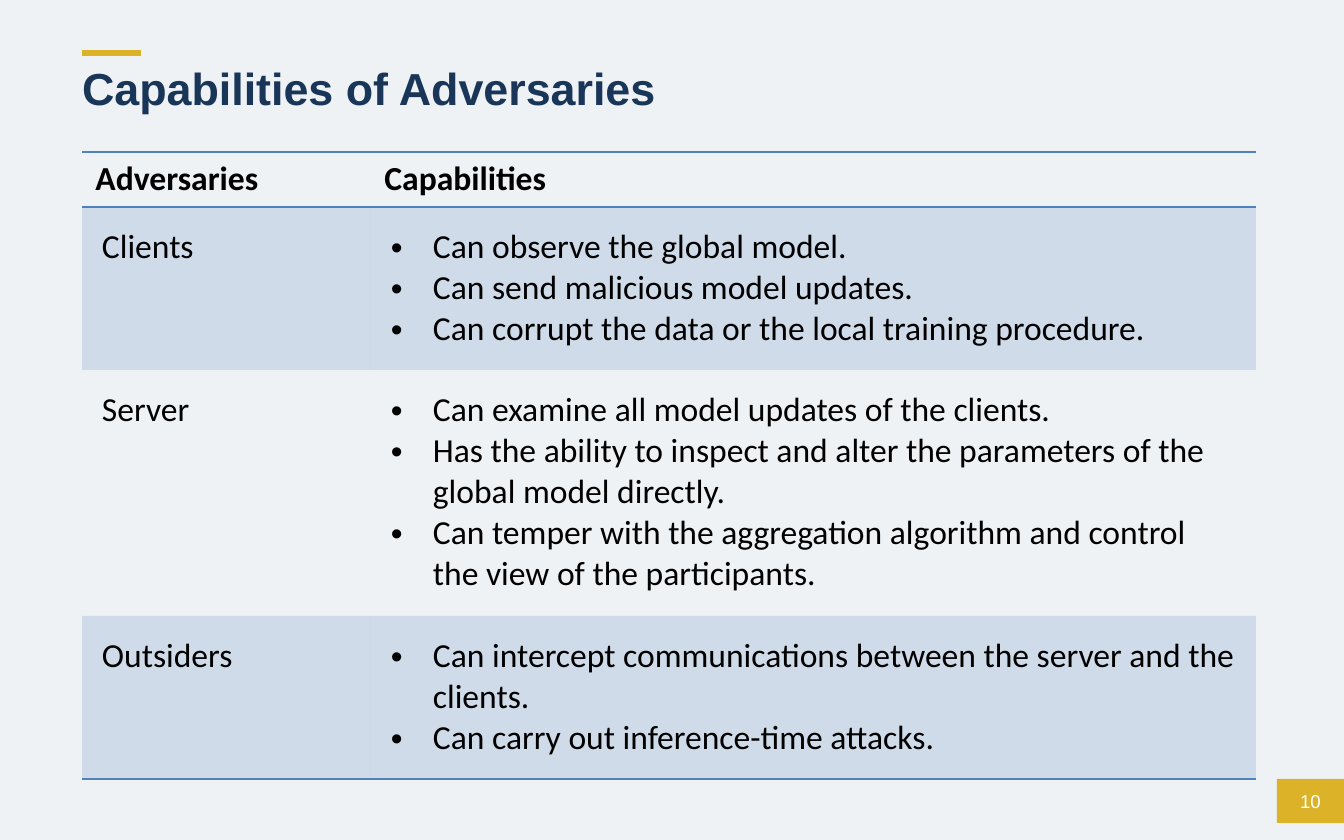
from lxml.etree import SubElement
from pptx import Presentation
from pptx.dml.color import RGBColor
from pptx.enum.shapes import MSO_CONNECTOR, MSO_SHAPE
from pptx.enum.text import MSO_ANCHOR, MSO_AUTO_SIZE, PP_ALIGN
from pptx.oxml import parse_xml
from pptx.oxml.ns import nsdecls, qn
from pptx.util import Emu, Pt

WIDTH, HEIGHT = 1344, 840
SCALE = 9144000 / WIDTH
COLORS = {
    "background": "EFF2F5",
    "gold": "DCB328",
    "navy": "193558",
    "blue": "4F81BD",
    "black": "000000",
    "white": "FFFFFF",
}
PLAIN_TABLE_STYLE = "{2D5ABB26-0587-4C30-8999-92F81FD0307C}"
HEADERS = ["Adversaries", "Capabilities"]
ROWS = [
    ("Clients", [
        "Can observe the global model.",
        "Can send malicious model updates.",
        "Can corrupt the data or the local training procedure.",
    ]),
    ("Server", [
        "Can examine all model updates of the clients.",
        "Has the ability to inspect and alter the parameters of the global model directly.",
        "Can temper with the aggregation algorithm and control the view of the participants.",
    ]),
    ("Outsiders", [
        "Can intercept communications between the server and the clients.",
        "Can carry out inference-time attacks.",
    ]),
]
COLUMN_WIDTHS = [289, 885]
ROW_HEIGHTS = [55, 163, 246, 163]


def px(value):
    return Emu(round(value * SCALE))


def color(name):
    return RGBColor.from_string(COLORS[name])


def set_margins(target, left, top, right, bottom):
    target.margin_left, target.margin_top = px(left), px(top)
    target.margin_right, target.margin_bottom = px(right), px(bottom)


def add_bullet(paragraph, indent):
    properties = paragraph._p.get_or_add_pPr()
    properties.set("marL", str(px(indent)))
    properties.set("indent", str(-px(indent)))
    SubElement(properties, qn("a:buFont"), typeface="Arial")
    SubElement(properties, qn("a:buChar"), char="•")


def write_text(frame, lines, size=18, font="Calibri", fill="black", bold=False,
               align=PP_ALIGN.LEFT, spacing=None, bullet_indent=0):
    for index, line in enumerate(lines):
        paragraph = frame.add_paragraph() if index else frame.paragraphs[0]
        paragraph.alignment = align
        if spacing:
            paragraph.line_spacing = spacing
        if bullet_indent:
            add_bullet(paragraph, bullet_indent)
        run = paragraph.add_run()
        run.text = line
        run.font.size = Pt(size)
        run.font.name = font
        run.font.bold = bold
        run.font.color.rgb = color(fill)


def add_title(slide, left, top, width, height):
    accent = slide.shapes.add_connector(
        MSO_CONNECTOR.STRAIGHT, px(left), px(top), px(left + 59), px(top))
    accent.line.color.rgb = color("gold")
    accent.line.width = Pt(2.75)
    SubElement(accent._element.spPr, qn("a:effectLst"))

    title = slide.shapes.title
    title.left, title.top = px(left), px(top + 7)
    title.width, title.height = px(width), px(height - 7)
    frame = title.text_frame
    frame.word_wrap = True
    frame.auto_size = MSO_AUTO_SIZE.NONE
    frame.vertical_anchor = MSO_ANCHOR.TOP
    set_margins(frame, 0, 7, 13, 7)
    write_text(frame, ["Capabilities of Adversaries"], size=24, font="Arial",
               fill="navy", bold=True, spacing=0.9)


def tint_cell(cell):
    cell.fill.solid()
    cell.fill.fore_color.rgb = color("blue")
    tone = cell._tc.tcPr.find(f".//{qn('a:srgbClr')}")
    SubElement(tone, qn("a:alpha"), val="20000")


def add_borders(cell, sides):
    for index, side in enumerate(sides):
        border = parse_xml(
            f'<a:ln{side} {nsdecls("a")} w="{Pt(1)}"><a:solidFill>'
            f'<a:srgbClr val="{COLORS["blue"]}"/></a:solidFill></a:ln{side}>')
        cell._tc.get_or_add_tcPr().insert(index, border)


def add_capability_table(slide, left, top):
    table = slide.shapes.add_table(
        len(ROWS) + 1, len(HEADERS), px(left), px(top),
        px(sum(COLUMN_WIDTHS)), px(sum(ROW_HEIGHTS))).table
    table.horz_banding = False
    table._tbl.tblPr.find(qn("a:tableStyleId")).text = PLAIN_TABLE_STYLE
    for column, width in zip(table.columns, COLUMN_WIDTHS):
        column.width = px(width)
    for row, height in zip(table.rows, ROW_HEIGHTS):
        row.height = px(height)

    for cell, header in zip(table.rows[0].cells, HEADERS):
        cell.fill.background()
        write_text(cell.text_frame, [header], bold=True)
        add_borders(cell, "TB")

    for number, (adversary, capabilities) in enumerate(ROWS, start=1):
        name_cell, list_cell = table.rows[number].cells
        write_text(name_cell.text_frame, [adversary])
        write_text(list_cell.text_frame, capabilities, bullet_indent=42)
        for cell in (name_cell, list_cell):
            set_margins(cell, 20, 20, 20, 20)
            if number % 2:
                tint_cell(cell)
            else:
                cell.fill.background()
            if number == len(ROWS):
                add_borders(cell, "B")


def add_page_number(slide, left, top, width, height):
    badge = slide.shapes.add_shape(
        MSO_SHAPE.RECTANGLE, px(left), px(top), px(width), px(height))
    badge.shadow.inherit = False
    badge.fill.solid()
    badge.fill.fore_color.rgb = color("gold")
    badge.line.fill.background()
    frame = badge.text_frame
    frame.vertical_anchor = MSO_ANCHOR.MIDDLE
    set_margins(frame, 0, 5, 0, 5)
    write_text(frame, ["10"], size=10, font="Arial", fill="white", align=PP_ALIGN.CENTER)


def main():
    presentation = Presentation()
    presentation.slide_width, presentation.slide_height = px(WIDTH), px(HEIGHT)
    slide = presentation.slides.add_slide(presentation.slide_layouts[5])
    slide.background.fill.solid()
    slide.background.fill.fore_color.rgb = color("background")
    add_title(slide, 82, 53, 988, 100)
    add_page_number(slide, 1277, 779, 67, 44)
    add_capability_table(slide, 82, 152)
    presentation.save("out.pptx")


if __name__ == "__main__":
    main()
